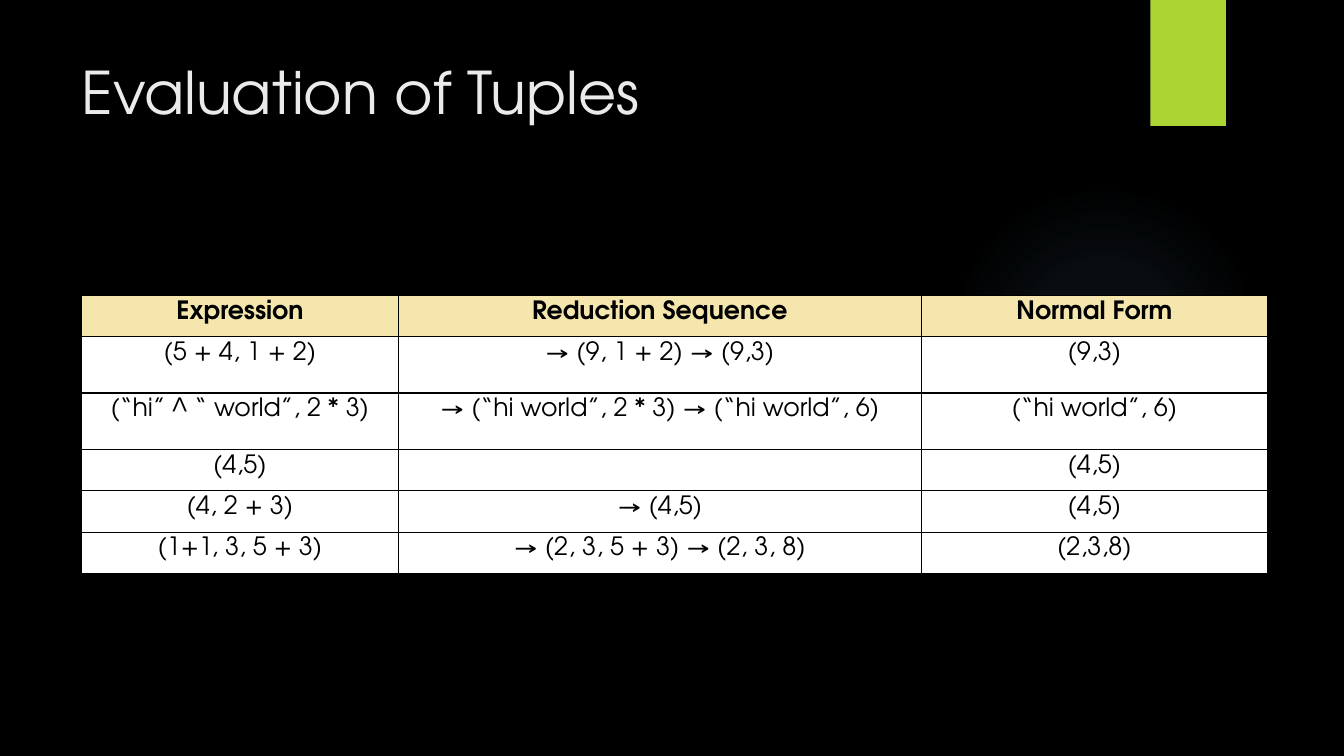
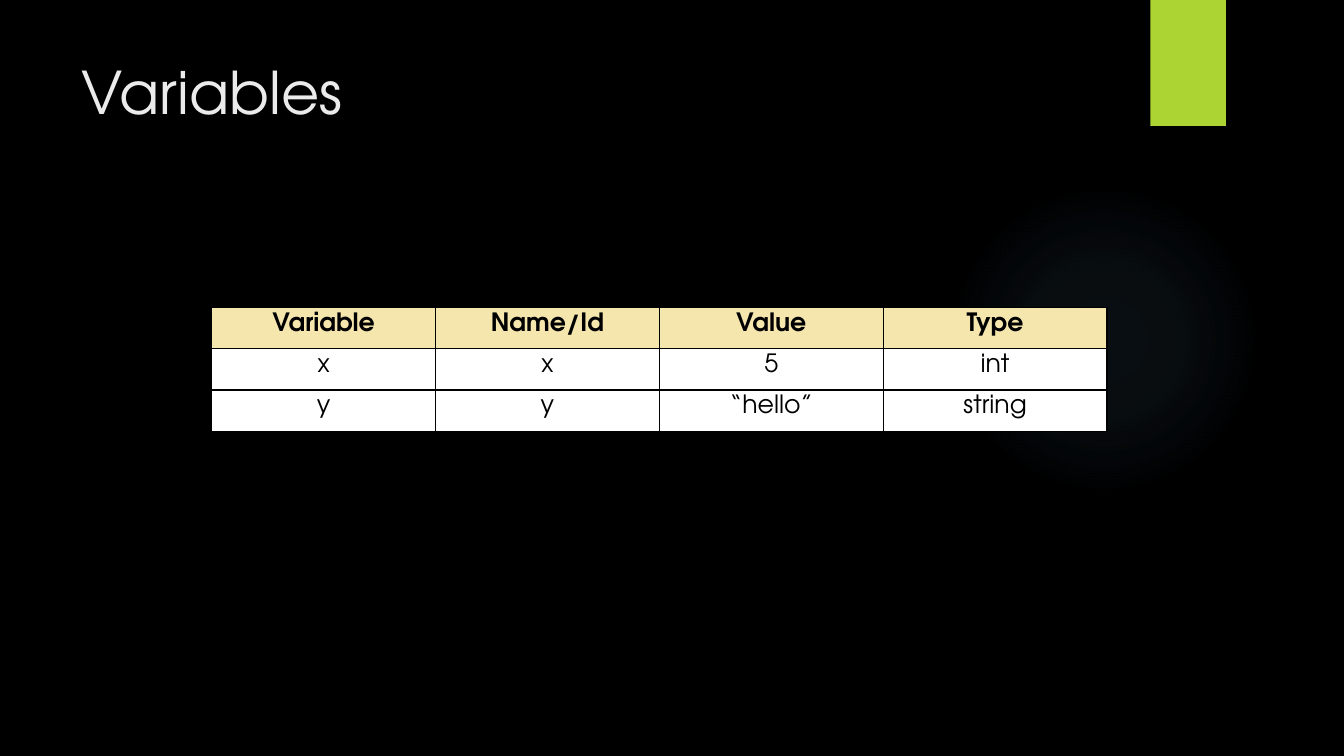
from lxml import etree
from pptx import Presentation
from pptx.dml.color import RGBColor
from pptx.enum.shapes import MSO_SHAPE
from pptx.enum.text import MSO_ANCHOR, MSO_AUTO_SIZE, PP_ALIGN
from pptx.oxml.ns import qn
from pptx.util import Inches, Pt

TOP = MSO_ANCHOR.TOP
NO_AUTOFIT = MSO_AUTO_SIZE.NONE
LEFT, CENTER = PP_ALIGN.LEFT, PP_ALIGN.CENTER
ELLIPSE, RECTANGLE = MSO_SHAPE.OVAL, MSO_SHAPE.RECTANGLE

FONT = "TeX Gyre Adventor"
COLORS = {
    "background": "000000",
    "title": "EBEBEB",
    "accent": "ACD433",
    "glow": "7AC4F0",
    "header": "F5E6AD",
    "cell": "FFFFFF",
    "ink": "000000",
}
GLOW_STOPS = [(0, 7), (36, 6), (69, 0)]  # position %, opacity %
ROW, TALL_ROW = 0.41, 0.56

SLIDES = [
    {
        "title": "Evaluation of Tuples",
        "corner": (0.81, 2.93),
        "columns": [3.14, 5.19, 3.43],
        "heights": [ROW, TALL_ROW, TALL_ROW, ROW, ROW, ROW],
        "rows": [
            ("Expression", "Reduction Sequence", "Normal Form"),
            ("(5 + 4, 1 + 2)", "→ (9, 1 + 2) → (9,3)", "(9,3)"),
            ("(“hi” ^ “ world”, 2 * 3)",
             "→ (“hi world”, 2 * 3) → (“hi world”, 6)", "(“hi world”, 6)"),
            ("(4,5)", "", "(4,5)"),
            ("(4, 2 + 3)", "→ (4,5)", "(4,5)"),
            ("(1+1, 3, 5 + 3)", "→ (2, 3, 5 + 3) → (2, 3, 8)", "(2,3,8)"),
        ],
    },
    {
        "title": "Variables",
        "corner": (2.1, 3.05),
        "columns": [2.22] * 4,
        "heights": [ROW] * 3,
        "rows": [
            ("Variable", "Name/Id", "Value", "Type"),
            ("x", "x", "5", "int"),
            ("y", "y", "“hello”", "string"),
        ],
    },
]


def rgb(name):
    return RGBColor.from_string(COLORS[name])


def style(paragraph, size, color, align, bold=False):
    paragraph.alignment = align
    font = paragraph.font
    font.name, font.size, font.bold = FONT, Pt(size), bold
    font.color.rgb = rgb(color)


def add_color(parent, name, opacity=100):
    color = etree.SubElement(parent, qn("a:srgbClr"), val=COLORS[name])
    if opacity < 100:
        etree.SubElement(color, qn("a:alpha"), val=str(opacity * 1000))


def fill_glow(shape):
    """Replace the shape's fill with a translucent radial gradient."""
    shape.fill.background()
    properties = shape.element.spPr
    gradient = etree.Element(qn("a:gradFill"), rotWithShape="1")
    stops = etree.SubElement(gradient, qn("a:gsLst"))
    for position, opacity in GLOW_STOPS:
        stop = etree.SubElement(stops, qn("a:gs"), pos=str(position * 1000))
        add_color(stop, "glow", opacity)
    circle = etree.SubElement(gradient, qn("a:path"), path="circle")
    etree.SubElement(circle, qn("a:fillToRect"),
                     l="50000", t="50000", r="50000", b="50000")
    properties.replace(properties.find(qn("a:noFill")), gradient)


def add_borders(cell):
    properties = cell._tc.get_or_add_tcPr()
    for index, side in enumerate(("lnL", "lnR", "lnT", "lnB")):
        line = etree.Element(qn(f"a:{side}"), w=str(Pt(1)))
        add_color(etree.SubElement(line, qn("a:solidFill")), "ink")
        properties.insert(index, line)


def set_up_layout(layout, slide):
    """Format the title and move the decorations from the slide to its layout."""
    background = layout.slide_master.background.fill
    background.solid()
    background.fore_color.rgb = rgb("background")

    title = layout.placeholders[0]
    title.left, title.top = Inches(0.71), Inches(0.5)
    title.width, title.height = Inches(10.29), Inches(1.53)
    title.text_frame.vertical_anchor = TOP
    title.text_frame.auto_size = NO_AUTOFIT

    glow = slide.shapes.add_shape(
        ELLIPSE, Inches(9.41), Inches(1.83), Inches(3.08), Inches(3.08))
    fill_glow(glow)
    tab = slide.shapes.add_shape(
        RECTANGLE, Inches(11.41), 0, Inches(0.75), Inches(1.25))
    tab.fill.solid()
    tab.fill.fore_color.rgb = rgb("accent")
    for index, decoration in enumerate((glow, tab), start=2):
        decoration.line.fill.background()
        decoration.shadow.inherit = False
        layout.shapes.element.insert(index, decoration.element)


def add_table(slide, content):
    columns, heights, rows = (content[key] for key in ("columns", "heights", "rows"))
    left, top = content["corner"]
    table = slide.shapes.add_table(
        len(rows), len(columns), Inches(left), Inches(top),
        Inches(sum(columns)), Inches(sum(heights))).table
    table.first_row = table.horz_banding = False
    for column, width in zip(table.columns, columns):
        column.width = Inches(width)
    for row, height in zip(table.rows, heights):
        row.height = Inches(height)

    for r, texts in enumerate(rows):
        header = r == 0
        for c, text in enumerate(texts):
            cell = table.cell(r, c)
            cell.text = text
            cell.vertical_anchor = TOP
            cell.margin_top = cell.margin_bottom = Inches(0.05)
            cell.fill.solid()
            cell.fill.fore_color.rgb = rgb("header" if header else "cell")
            add_borders(cell)
            style(cell.text_frame.paragraphs[0], 18, "ink", CENTER, header)


def main():
    deck = Presentation()
    deck.slide_width, deck.slide_height = Inches(13.33), Inches(7.5)
    layout = deck.slide_layouts.get_by_name("Title Only")
    for number, content in enumerate(SLIDES):
        slide = deck.slides.add_slide(layout)
        if number == 0:
            set_up_layout(layout, slide)
        slide.shapes.title.text = content["title"]
        style(slide.shapes.title.text_frame.paragraphs[0], 42, "title", LEFT)
        add_table(slide, content)
    deck.save("out.pptx")


if __name__ == "__main__":
    main()
